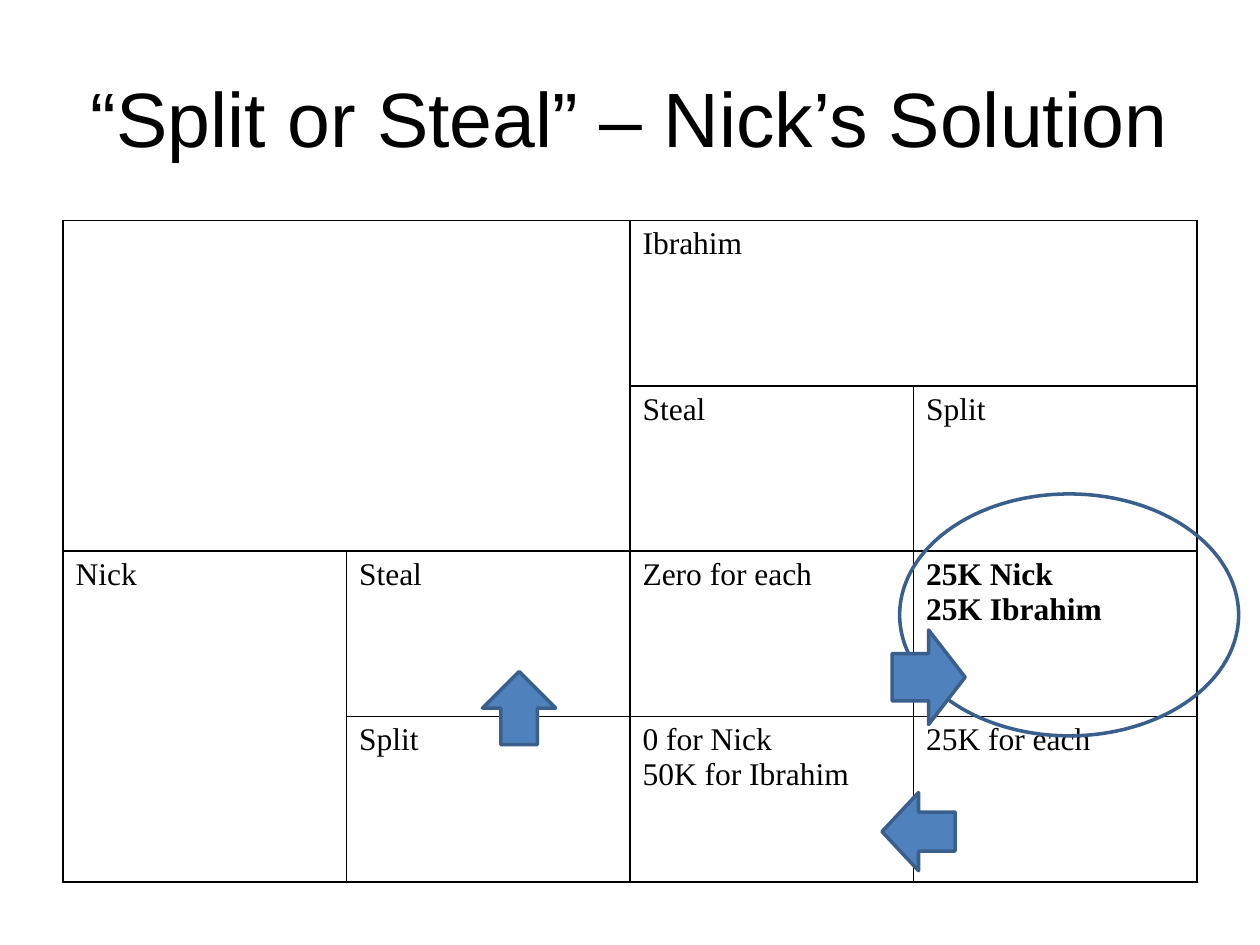
from lxml import etree
from pptx import Presentation
from pptx.dml.color import RGBColor
from pptx.enum.shapes import MSO_SHAPE
from pptx.enum.text import MSO_ANCHOR, PP_ALIGN
from pptx.oxml.ns import qn
from pptx.util import Inches, Pt

LEFT, CENTER = PP_ALIGN.LEFT, PP_ALIGN.CENTER
MIDDLE = MSO_ANCHOR.MIDDLE

COLORS = {"ink": "000000", "fill": "4F81BD", "outline": "3A5F8C"}
WIDTH, HEIGHT = 10, 7.5
MARGIN = WIDTH * 0.05
GRID_TOP, GRID_HEIGHT = 1.75, 5.25
ROWS, COLUMNS = 4, 4

TITLE = "“Split or Steal” – Nick’s Solution"
MERGES = [((0, 0), (1, 1)), ((0, 2), (0, 3)), ((2, 0), (3, 0))]
PAYOFFS = {
    (0, 2): ["Ibrahim"],
    (1, 2): ["Steal"],
    (1, 3): ["Split"],
    (2, 0): ["Nick"],
    (2, 1): ["Steal"],
    (2, 2): ["Zero for each"],
    (2, 3): ["25K Nick", "25K Ibrahim"],
    (3, 1): ["Split"],
    (3, 2): ["0 for Nick", "50K for Ibrahim"],
    (3, 3): ["25K for each"],
}
SOLUTION = (2, 3)
MARKERS = [
    (MSO_SHAPE.UP_ARROW, (3.83, 5.33, 0.58, 0.58), "fill"),
    (MSO_SHAPE.LEFT_ARROW, (7, 6.29, 0.58, 0.62), "fill"),
    (MSO_SHAPE.OVAL, (7.14, 3.92, 2.69, 1.92), None),
    (MSO_SHAPE.RIGHT_ARROW, (7.08, 5, 0.58, 0.75), "fill"),
]


def color(name):
    return RGBColor.from_string(COLORS[name])


def write(frame, lines, font="Times New Roman", size=18, bold=False, align=LEFT):
    frame.word_wrap = True
    for index, line in enumerate(lines):
        para = frame.add_paragraph() if index else frame.paragraphs[0]
        para.alignment = align
        span = para.add_run()
        span.text = line
        span.font.name = font
        span.font.size = Pt(size)
        span.font.bold = bold
        span.font.color.rgb = color("ink")


def add_borders(cell):
    properties = cell._tc.get_or_add_tcPr()
    for position, side in enumerate(("a:lnL", "a:lnR", "a:lnT", "a:lnB")):
        line = etree.Element(qn(side), w=str(Pt(1)))
        fill = etree.SubElement(line, qn("a:solidFill"))
        etree.SubElement(fill, qn("a:srgbClr"), val=COLORS["ink"])
        properties.insert(position, line)


def add_title(page):
    box = page.shapes.add_textbox(
        Inches(MARGIN), Inches(0.3), Inches(WIDTH - 2 * MARGIN), Inches(1.25))
    box.text_frame.vertical_anchor = MIDDLE
    write(box.text_frame, [TITLE], font="Arial", size=44, align=CENTER)


def add_payoffs(page):
    grid_width = WIDTH - 2 * MARGIN
    table = page.shapes.add_table(
        ROWS, COLUMNS, Inches(MARGIN), Inches(GRID_TOP),
        Inches(grid_width), Inches(GRID_HEIGHT)).table
    table.first_row = table.horz_banding = False
    for column in table.columns:
        column.width = Inches(grid_width / COLUMNS)
    for row in table.rows:
        row.height = Inches(GRID_HEIGHT / ROWS)
    for cell in table.iter_cells():
        cell.fill.background()
        add_borders(cell)
    for first, last in MERGES:
        table.cell(*first).merge(table.cell(*last))
    for place, lines in PAYOFFS.items():
        write(table.cell(*place).text_frame, lines, bold=place == SOLUTION)


def add_marker(page, kind, bounds, fill):
    marker = page.shapes.add_shape(kind, *map(Inches, bounds))
    marker.shadow.inherit = False
    if fill:
        marker.fill.solid()
        marker.fill.fore_color.rgb = color(fill)
    else:
        marker.fill.background()
    marker.line.color.rgb = color("outline")
    marker.line.width = Pt(2)


def main():
    deck = Presentation()
    deck.slide_width, deck.slide_height = Inches(WIDTH), Inches(HEIGHT)
    page = deck.slides.add_slide(deck.slide_layouts[6])
    add_title(page)
    add_payoffs(page)
    for marker in MARKERS:
        add_marker(page, *marker)
    deck.save("out.pptx")


if __name__ == "__main__":
    main()
